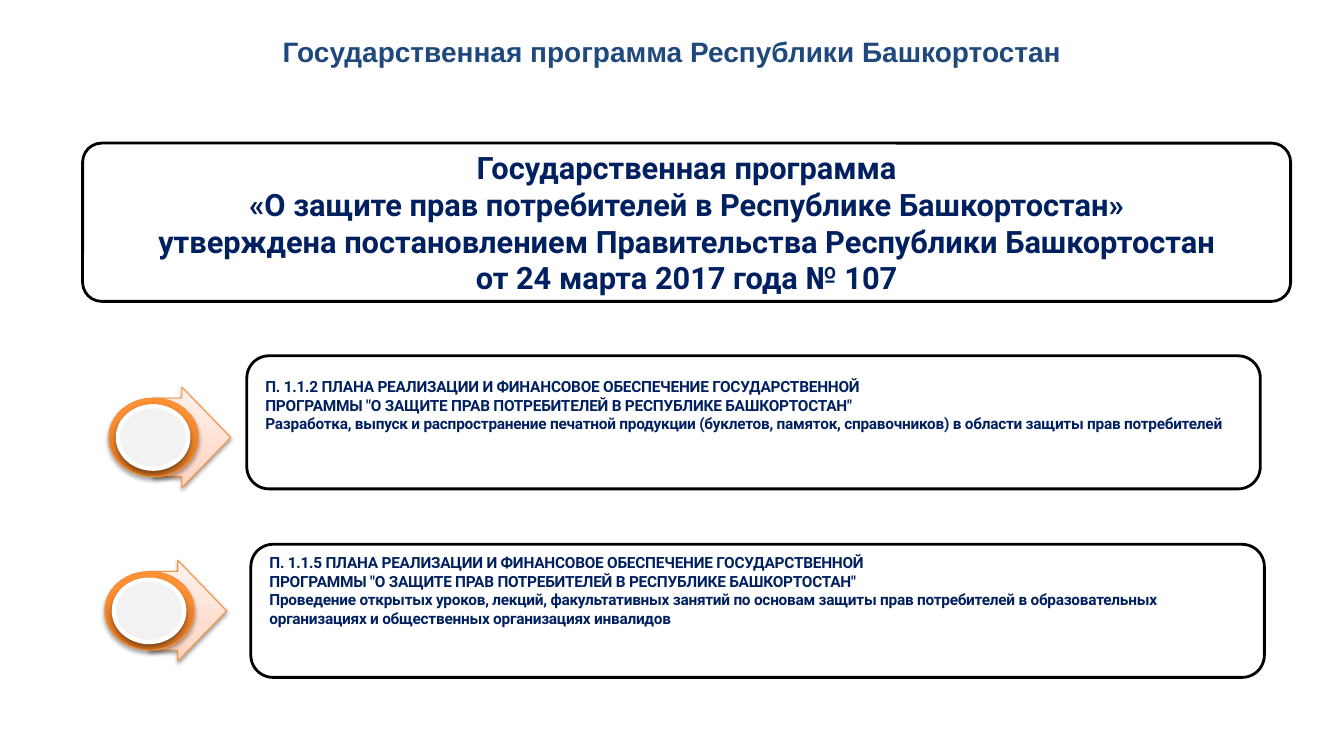
from lxml import etree
from pptx import Presentation
from pptx.dml.color import RGBColor
from pptx.enum.shapes import MSO_SHAPE as Shape
from pptx.enum.text import MSO_ANCHOR as Anchor, PP_ALIGN as Align
from pptx.oxml.ns import qn
from pptx.util import Inches, Pt

# Content
TITLE = "Государственная программа Республики Башкортостан"
PROGRAM = [
    "Государственная программа",
    "«О защите прав потребителей в Республике Башкортостан»",
    "утверждена постановлением Правительства Республики Башкортостан\v"
    "от 24 марта 2017 года № 107",
]
PLAN = "ПЛАНА РЕАЛИЗАЦИИ И ФИНАНСОВОЕ ОБЕСПЕЧЕНИЕ ГОСУДАРСТВЕННОЙ"
PLAN_NAME = 'ПРОГРАММЫ "О ЗАЩИТЕ ПРАВ ПОТРЕБИТЕЛЕЙ В РЕСПУБЛИКЕ БАШКОРТОСТАН"'
# Item number, description, box corner, arrow badge corner, room under the text
ITEMS = [
    ("П. 1.1.2", "Разработка, выпуск и распространение печатной продукции "
     "(буклетов, памяток, справочников) в области защиты прав потребителей",
     (2.45, 3.53), (1.08, 3.84), 0.4),
    ("П. 1.1.5", "Проведение открытых уроков, лекций, факультативных занятий "
     "по основам защиты прав потребителей в образовательных организациях "
     "и общественных организациях инвалидов",
     (2.49, 5.4), (1.04, 5.56), 0.47),
]

# Look
WIDTH, HEIGHT = 13.34, 7.5
ITEM_SIZE = (10.06, 1.32)
WHITE = RGBColor(0xFF, 0xFF, 0xFF)
BLACK = RGBColor(0, 0, 0)
BLUE = RGBColor(0x1F, 0x49, 0x7D)
NAVY = RGBColor(0x00, 0x20, 0x60)
ORANGE = RGBColor(0xF6, 0x92, 0x40)
GREY = RGBColor(0xF2, 0xF2, 0xF2)
PEACH_STOPS = [(0, RGBColor(0xFF, 0xD2, 0xBD)), (35, RGBColor(0xFF, 0xDE, 0xD0)),
               (100, RGBColor(0xFF, 0xF2, 0xED))]
RING_STOPS = [(0, RGBColor(0xCC, 0x6E, 0x20)), (80, RGBColor(0xFF, 0x90, 0x34)),
              (100, RGBColor(0xFF, 0x91, 0x36))]
# Badge layers: preset, offset and size, fill, line, line width, shadow opacity and distance
BADGE = [
    (Shape.RIGHT_ARROW, (0.44, 0, 0.77, 1), PEACH_STOPS, ORANGE, 0.75, 38, 1.6),
    (Shape.FLOWCHART_CONNECTOR, (0, 0.11, 0.89, 0.78), RING_STOPS, ORANGE, 0.75, 35, 1.8),
    (Shape.FLOWCHART_CONNECTOR, (0.09, 0.19, 0.7, 0.62), GREY, WHITE, 3, 38, 1.6),
]


def add_element(parent, tag, **attributes):
    element = etree.SubElement(parent, qn(tag))
    for name, value in attributes.items():
        element.set(name, str(value))
    return element


def set_gradient(shape, stops):
    """Bottom-to-top gradient with any number of stops."""
    shape.fill.gradient()
    gradient = shape._element.spPr.find(qn("a:gradFill"))
    for child in list(gradient):
        gradient.remove(child)
    stop_list = add_element(gradient, "a:gsLst")
    for percent, color in stops:
        stop = add_element(stop_list, "a:gs", pos=percent * 1000)
        add_element(stop, "a:srgbClr", val=color)
    add_element(gradient, "a:lin", ang=270 * 60000, scaled=0)


def set_shadow(shape, opacity, distance):
    effects = shape._element.spPr.find(qn("a:effectLst"))
    shadow = add_element(effects, "a:outerShdw", blurRad=Pt(3.1), dist=Pt(distance),
                         dir=90 * 60000, rotWithShape=0)
    color = add_element(shadow, "a:srgbClr", val=BLACK)
    add_element(color, "a:alpha", val=opacity * 1000)


def add_shape(preset, place, fill, line, line_width):
    shape = slide.shapes.add_shape(preset, *map(Inches, place))
    shape.shadow.inherit = False
    if isinstance(fill, list):
        set_gradient(shape, fill)
    else:
        shape.fill.solid()
        shape.fill.fore_color.rgb = fill
    shape.line.color.rgb = line
    shape.line.width = Pt(line_width)
    return shape


def write(box, lines, size, color, font, align, spacing=0):
    frame = box.text_frame
    frame.text = "\n".join(lines)
    for para in frame.paragraphs:
        para.alignment = align
        for span in para.runs:
            span.font.size, span.font.bold, span.font.name = Pt(size), True, font
            span.font.color.rgb = color
            if spacing:
                span.font._element.set("spc", str(int(spacing * 100)))
    return frame


deck = Presentation()
deck.slide_width, deck.slide_height = Inches(WIDTH), Inches(HEIGHT)
slide = deck.slides.add_slide(deck.slide_layouts[6])

# Title
title = slide.shapes.add_textbox(0, Inches(0.29), Inches(WIDTH), Inches(0.44))
write(title, [TITLE], 20, BLUE, "Arial", Align.CENTER).word_wrap = True

# Program box
program = add_shape(Shape.ROUNDED_RECTANGLE, (0.82, 1.42, 11.99, 1.57), WHITE, BLACK, 2)
program.adjustments[0] = 0.12
frame = write(program, PROGRAM, 22, NAVY, "Roboto", Align.CENTER)
frame.vertical_anchor, frame.word_wrap = Anchor.MIDDLE, False

# Plan items, each with its arrow badge
for number, description, corner, (left, top), room_below in ITEMS:
    box = add_shape(Shape.ROUNDED_RECTANGLE, corner + ITEM_SIZE, WHITE, BLACK, 2)
    lines = [f"{number} {PLAN}", PLAN_NAME, description]
    frame = write(box, lines, 11, NAVY, "Roboto", Align.LEFT, -0.2)
    frame.vertical_anchor, frame.word_wrap = Anchor.MIDDLE, True
    frame.margin_left = frame.margin_right = Inches(0.12)
    frame.margin_top, frame.margin_bottom = Inches(0.06), Inches(room_below)

    for preset, (dx, dy, width, height), fill, line, line_width, opacity, distance in BADGE:
        layer = add_shape(preset, (left + dx, top + dy, width, height), fill, line, line_width)
        set_shadow(layer, opacity, distance)
        if preset == Shape.RIGHT_ARROW:
            layer.adjustments[0], layer.adjustments[1] = 0.78, 0.63

deck.save("out.pptx")
